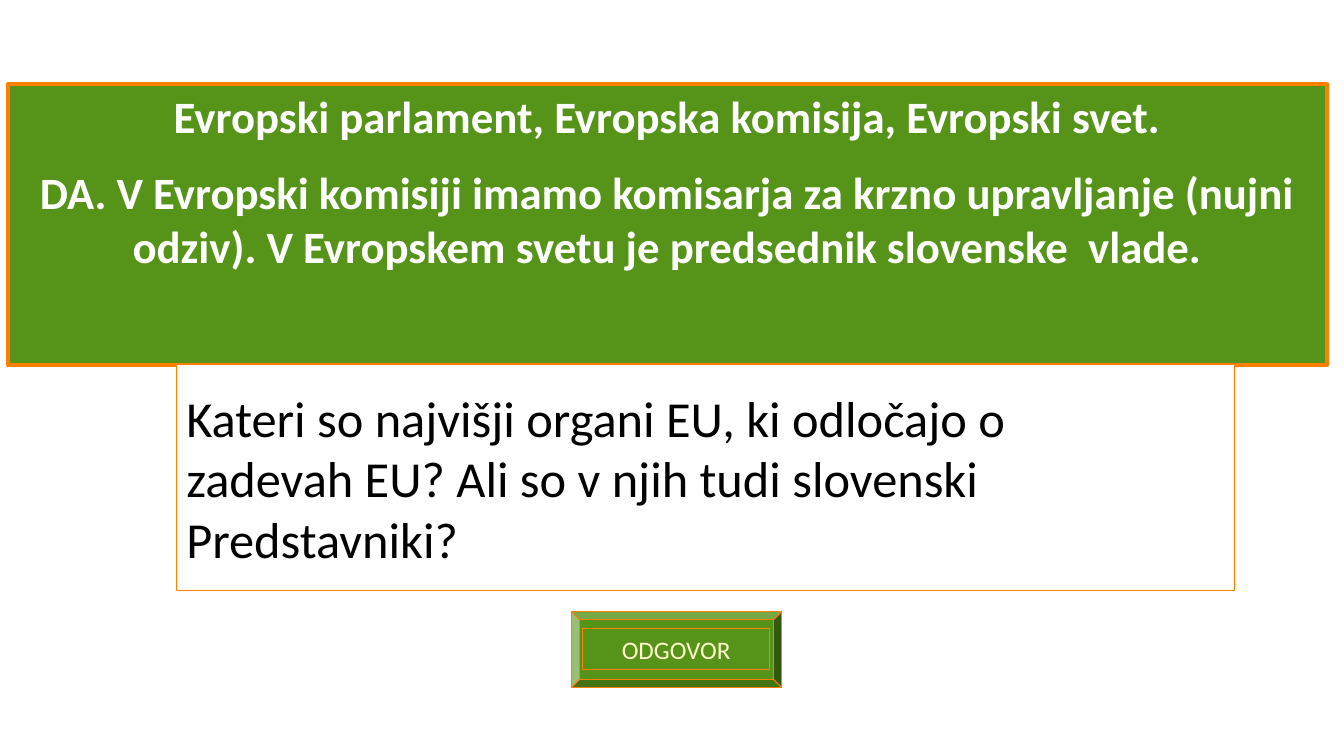
from pptx import Presentation
from pptx.dml.color import RGBColor
from pptx.enum.shapes import MSO_SHAPE
from pptx.enum.text import MSO_ANCHOR, PP_ALIGN
from pptx.util import Pt

COLORS = {
    "green": "569319",
    "orange": "FF7F00",
    "white": "FFFFFF",
    "cream": "FFFFCC",
    "black": "000000",
}
ANSWER = [
    "Evropski parlament, Evropska komisija, Evropski svet.",
    "DA. V Evropski komisiji imamo komisarja za krzno upravljanje "
    "(nujni odziv). V Evropskem svetu je predsednik slovenske  vlade.",
]
QUESTION = [
    "Kateri so najvišji organi EU, ki odločajo o",
    "zadevah EU? Ali so v njih tudi slovenski",
    "Predstavniki?",
]


def color(name):
    return RGBColor.from_string(COLORS[name])


def add_panel(shapes, box, fill, line_width=0.75, kind=MSO_SHAPE.RECTANGLE):
    panel = shapes.add_shape(kind, *[Pt(length) for length in box])
    panel.shadow.inherit = False
    panel.fill.solid()
    panel.fill.fore_color.rgb = color(fill)
    panel.line.color.rgb = color("orange")
    panel.line.width = Pt(line_width)
    return panel


def write_text(panel, lines, font_color, font, align, anchor, gap=0):
    frame = panel.text_frame
    frame.word_wrap = True
    frame.vertical_anchor = anchor
    for index, line in enumerate(lines):
        para = frame.paragraphs[0] if index == 0 else frame.add_paragraph()
        para.alignment = align
        if index and gap:
            para.space_before = Pt(gap)
        span = para.add_run()
        span.text = line
        for name, value in {"name": "Calibri", **font}.items():
            setattr(span.font, name, value)
        span.font.color.rgb = color(font_color)


def add_answer_button(page, box):
    left, top, width, height = box
    group = page.shapes.add_group_shape()
    bevel = add_panel(group.shapes, box, "green", kind=MSO_SHAPE.BEVEL)
    bevel.adjustments[0] = 0.104
    label_box = (left + 8, top + 12.2, width - 16.5, 29)
    label = add_panel(group.shapes, label_box, "green")
    write_text(label, ["ODGOVOR"], "cream", {"size": Pt(18)},
               PP_ALIGN.CENTER, MSO_ANCHOR.TOP)


def add_answer(page, box):
    panel = add_panel(page.shapes, box, "green", line_width=3)
    write_text(panel, ANSWER, "white", {"size": Pt(32), "bold": True},
               PP_ALIGN.CENTER, MSO_ANCHOR.TOP, gap=16)


def add_question(page, box):
    panel = add_panel(page.shapes, box, "white")
    write_text(panel, QUESTION, "black", {"size": Pt(36)},
               PP_ALIGN.LEFT, MSO_ANCHOR.MIDDLE)


def main():
    deck = Presentation()
    deck.slide_width, deck.slide_height = Pt(960), Pt(540)
    page = deck.slides.add_slide(deck.slide_layouts[6])
    add_answer_button(page, (408.3, 437, 150, 54))
    add_answer(page, (5.8, 60, 942, 201))
    add_question(page, (126, 260, 756, 162))
    deck.save("out.pptx")


if __name__ == "__main__":
    main()
